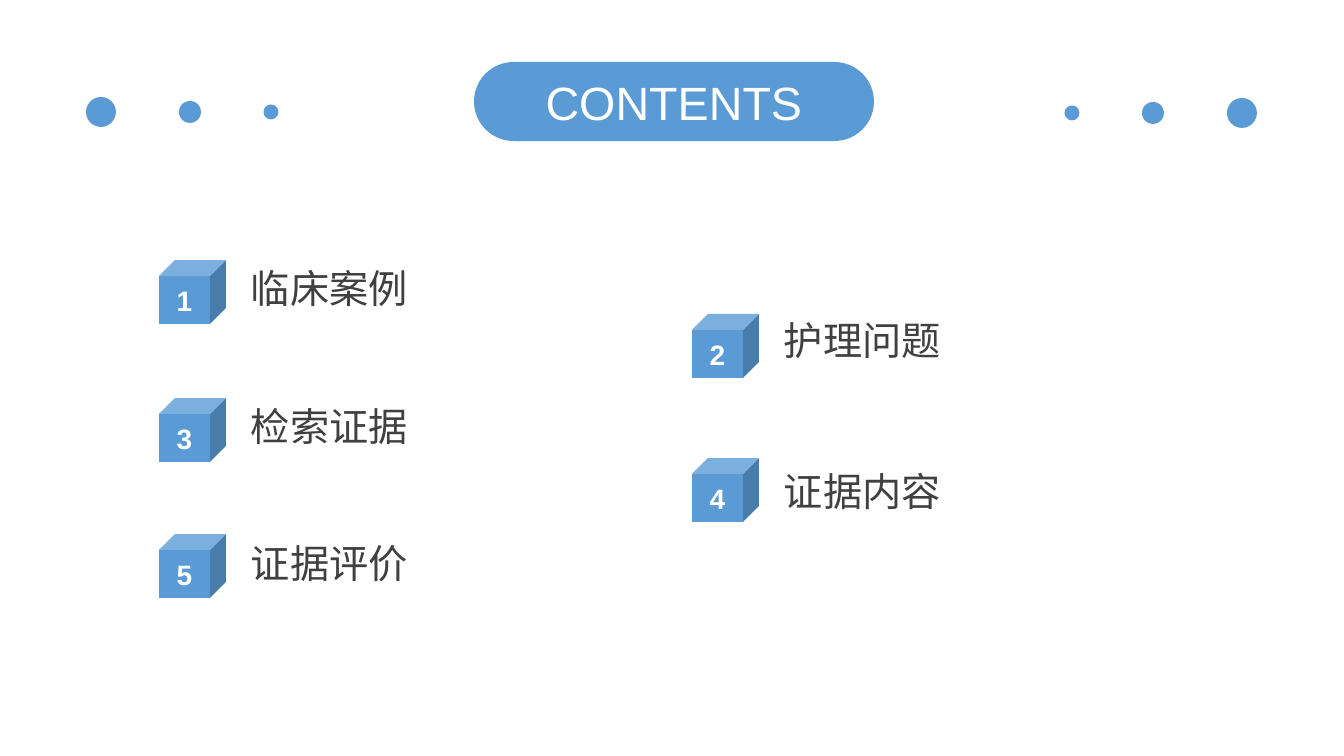
import pptx
import pptx.dml.color
import pptx.enum.shapes
import pptx.enum.text
import pptx.oxml.ns
import pptx.util
import lxml.etree

PX = 12192000 / 1344
COLORS = {"blue": "5B9BD5", "white": "FFFFFF", "text": "404040"}
SHAPES = pptx.enum.shapes.MSO_SHAPE
ALIGN = pptx.enum.text.PP_ALIGN


def add_blue_shape(kind, *box):
    shape = slide.shapes.add_shape(kind, *[round(value * PX) for value in box])
    shape.shadow.inherit = False
    shape.fill.solid()
    shape.fill.fore_color.rgb = pptx.dml.color.RGBColor.from_string(COLORS["blue"])
    shape.line.fill.background()
    return shape


def write_text(shape, text, size, color="white", font="Arial", bold=False,
               align=ALIGN.CENTER, spacing=1.0, insets=(10, 5)):
    frame = shape.text_frame
    frame.word_wrap = True
    frame.auto_size = pptx.enum.text.MSO_AUTO_SIZE.NONE
    frame.vertical_anchor = pptx.enum.text.MSO_ANCHOR.MIDDLE
    frame.margin_left = frame.margin_right = round(insets[0] * PX)
    frame.margin_top = frame.margin_bottom = round(insets[1] * PX)
    paragraph = frame.paragraphs[0]
    paragraph.alignment = align
    paragraph.line_spacing = spacing
    run = paragraph.add_run()
    run.text = text
    run.font.size = pptx.util.Pt(size)
    run.font.bold = bold
    run.font.name = font
    run.font.color.rgb = pptx.dml.color.RGBColor.from_string(COLORS[color])
    east_asian = lxml.etree.SubElement(run.font._element, pptx.oxml.ns.qn("a:ea"))
    east_asian.set("typeface", font)


presentation = pptx.Presentation()
presentation.slide_width = round(1344 * PX)
presentation.slide_height = round(756 * PX)
slide = presentation.slides.add_slide(presentation.slide_layouts[5])

for center_x, diameter in [(101, 30), (190, 22), (271, 15)]:
    for x, y in [(center_x, 112), (1343 - center_x, 113)]:
        add_blue_shape(SHAPES.OVAL, x - diameter / 2, y - diameter / 2, diameter, diameter)

pill = add_blue_shape(SHAPES.ROUNDED_RECTANGLE, 474, 62, 400, 79)
pill.adjustments[0] = 0.5
title = slide.shapes.title
title.left, title.top, title.width, title.height = pill.left, pill.top, pill.width, pill.height
write_text(title, "CONTENTS", 33.3, insets=(10, 0))
slide.shapes.element.append(title.element)

columns = {"left": (159, 389), "right": (692, 429)}
items = [
    ("临床案例", "left", 260, 255),
    ("护理问题", "right", 314, 307),
    ("检索证据", "left", 398, 393),
    ("证据内容", "right", 458, 458),
    ("证据评价", "left", 534, 530),
]
for number, (label, column, cube_top, label_top) in enumerate(items, 1):
    left, label_width = columns[column]
    cube = add_blue_shape(SHAPES.CUBE, left, cube_top, 67, 64)
    write_text(cube, str(number), 20, bold=True)
    label_box = slide.shapes.add_textbox(
        *[round(value * PX) for value in (left + 92, label_top, label_width, 72)])
    write_text(label_box, label, 28, color="text", font="Noto Sans CJK SC",
               align=ALIGN.LEFT, spacing=0.9, insets=(0, 0))

presentation.save("out.pptx")
